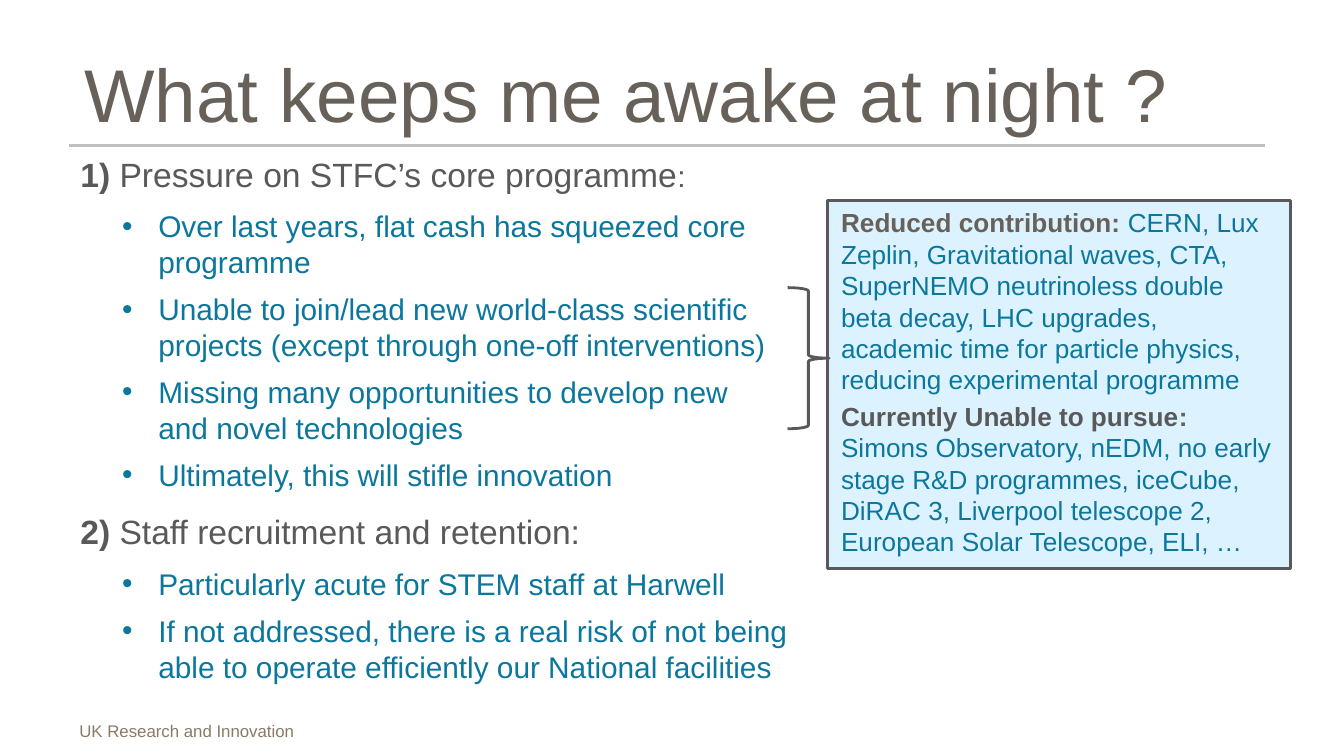
import pptx
import pptx.dml.color
import pptx.enum.shapes
import pptx.enum.text
import pptx.oxml.ns
import pptx.util
from lxml import etree

Inches = pptx.util.Inches
Pt = pptx.util.Pt
SHAPES = pptx.enum.shapes.MSO_SHAPE
ANCHOR = pptx.enum.text.MSO_ANCHOR

COLOURS = {
    "title": "68615A",
    "heading": "595959",
    "body": "0C779D",
    "panel": "DDF2FF",
    "rule": "BFBFBF",
    "footer": "8A7967",
}

PRESSURES = [
    "Over last years, flat cash has squeezed core programme",
    "Unable to join/lead new world-class scientific projects (except through one-off interventions)",
    "Missing many opportunities to develop new and novel technologies",
    "Ultimately, this will stifle innovation",
]
STAFFING = [
    "Particularly acute for STEM staff at Harwell",
    "If not addressed, there is a real risk of not being able to operate "
    "efficiently our National facilities",
]
REDUCED = (
    "CERN, Lux Zeplin, Gravitational waves, CTA, SuperNEMO neutrinoless double beta decay, "
    "LHC upgrades, academic time for particle physics, reducing experimental programme"
)
UNABLE = (
    "Simons Observatory, nEDM, no early stage R&D programmes, iceCube, DiRAC 3, "
    "Liverpool telescope 2, European Solar Telescope, ELI, …"
)


def colour(name):
    return pptx.dml.color.RGBColor.from_string(COLOURS[name])


def add_span(para, text, size, tint, bold=False):
    span = para.add_run()
    span.text = text
    span.font.name = "Arial"
    span.font.size = Pt(size)
    span.font.bold = bold
    span.font.color.rgb = colour(tint)


def add_text_box(page, left, top, width, height):
    box = page.shapes.add_textbox(Inches(left), Inches(top), Inches(width), Inches(height))
    box.text_frame.word_wrap = True
    return box.text_frame


def next_para(frame, index):
    para = frame.paragraphs[0] if index == 0 else frame.add_paragraph()
    para.alignment = pptx.enum.text.PP_ALIGN.LEFT
    return para


def outline(shape):
    shape.shadow.inherit = False
    shape.line.color.rgb = colour("heading")
    shape.line.width = Pt(1.5)


def add_title(page, left, top, width, height):
    frame = add_text_box(page, left, top, width, height)
    frame.vertical_anchor = ANCHOR.MIDDLE
    add_span(frame.paragraphs[0], "What keeps me awake at night ?", 40, "title")

    # Rule under the title
    rule_top = Inches(top + height + 0.06)
    rule = page.shapes.add_connector(
        pptx.enum.shapes.MSO_CONNECTOR.STRAIGHT,
        Inches(left - 0.02), rule_top, Inches(left + width - 0.04), rule_top)
    rule.line.color.rgb = colour("rule")
    rule.line.width = Pt(1.5)
    etree.SubElement(rule._element.spPr, pptx.oxml.ns.qn("a:effectLst"))


def add_section(page, left, top, width, height, heading, points):
    heading_height = 0.37

    # Numbered heading
    frame = add_text_box(page, left, top, 5.07, heading_height)
    para = frame.paragraphs[0]
    para.line_spacing = 0.9
    para.space_after = Pt(3)
    for text, size, bold in heading:
        add_span(para, text, size, "heading", bold)

    # Bulleted points
    frame = add_text_box(page, left + 0.03, top + heading_height, width, height - heading_height)
    for index, point in enumerate(points):
        para = next_para(frame, index)
        para.space_before = para.space_after = Pt(3)
        properties = para._p.get_or_add_pPr()
        properties.set("marL", str(Inches(0.55)))
        properties.set("indent", str(Inches(-0.27)))
        for tag, key, value in (("a:buFont", "typeface", "Arial"), ("a:buChar", "char", "•")):
            etree.SubElement(properties, pptx.oxml.ns.qn(tag)).set(key, value)
        add_span(para, point, 16, "body")


def add_panel(page, left, top, width, height):
    panel = page.shapes.add_shape(
        SHAPES.RECTANGLE, Inches(left), Inches(top), Inches(width), Inches(height))
    panel.fill.solid()
    panel.fill.fore_color.rgb = colour("panel")
    outline(panel)
    frame = panel.text_frame
    frame.word_wrap = True
    frame.vertical_anchor = ANCHOR.TOP
    paragraphs = [
        [("Reduced contribution: ", "title", True), (REDUCED, "body", False)],
        [("Currently Unable to pursue", "heading", True), (": ", "title", True),
         (UNABLE, "body", False)],
    ]
    for index, spans in enumerate(paragraphs):
        para = next_para(frame, index)
        para.space_before = Pt(2.8)
        for text, tint, bold in spans:
            add_span(para, text, 14, tint, bold)


def add_brace(page, left, top, width, height):
    brace = page.shapes.add_shape(
        SHAPES.RIGHT_BRACE, Inches(left), Inches(top), Inches(width), Inches(height))
    brace.adjustments[0] = 0.08
    brace.adjustments[1] = 0.5
    brace.fill.background()
    outline(brace)


def add_footer(page, left, top, width, height):
    frame = add_text_box(page, left, top, width, height)
    frame.margin_left = 0
    add_span(frame.paragraphs[0], "UK Research and Innovation", 9, "footer")


def main():
    # Widescreen page, 16 to 9
    deck = pptx.Presentation()
    deck.slide_width = Inches(10)
    deck.slide_height = deck.slide_width * 9 // 16
    page = deck.slides.add_slide(deck.slide_layouts[6])

    add_title(page, 0.53, 0.36, 8.92, 0.66)
    add_section(page, 0.5, 1.13, 5.35, 2.61,
                [("1) ", 18, True), ("Pressure on STFC’s core programme", 18, False),
                 (":", 16, False)], PRESSURES)
    add_section(page, 0.5, 3.79, 5.51, 1.36,
                [("2) ", 18, True), ("Staff recruitment and retention:", 18, False)], STAFFING)
    add_panel(page, 6.16, 1.49, 3.44, 2.74)
    add_brace(page, 5.86, 2.14, 0.31, 1.05)
    add_footer(page, 0.59, 5.31, 2.5, 0.25)

    deck.save("out.pptx")


if __name__ == "__main__":
    main()
